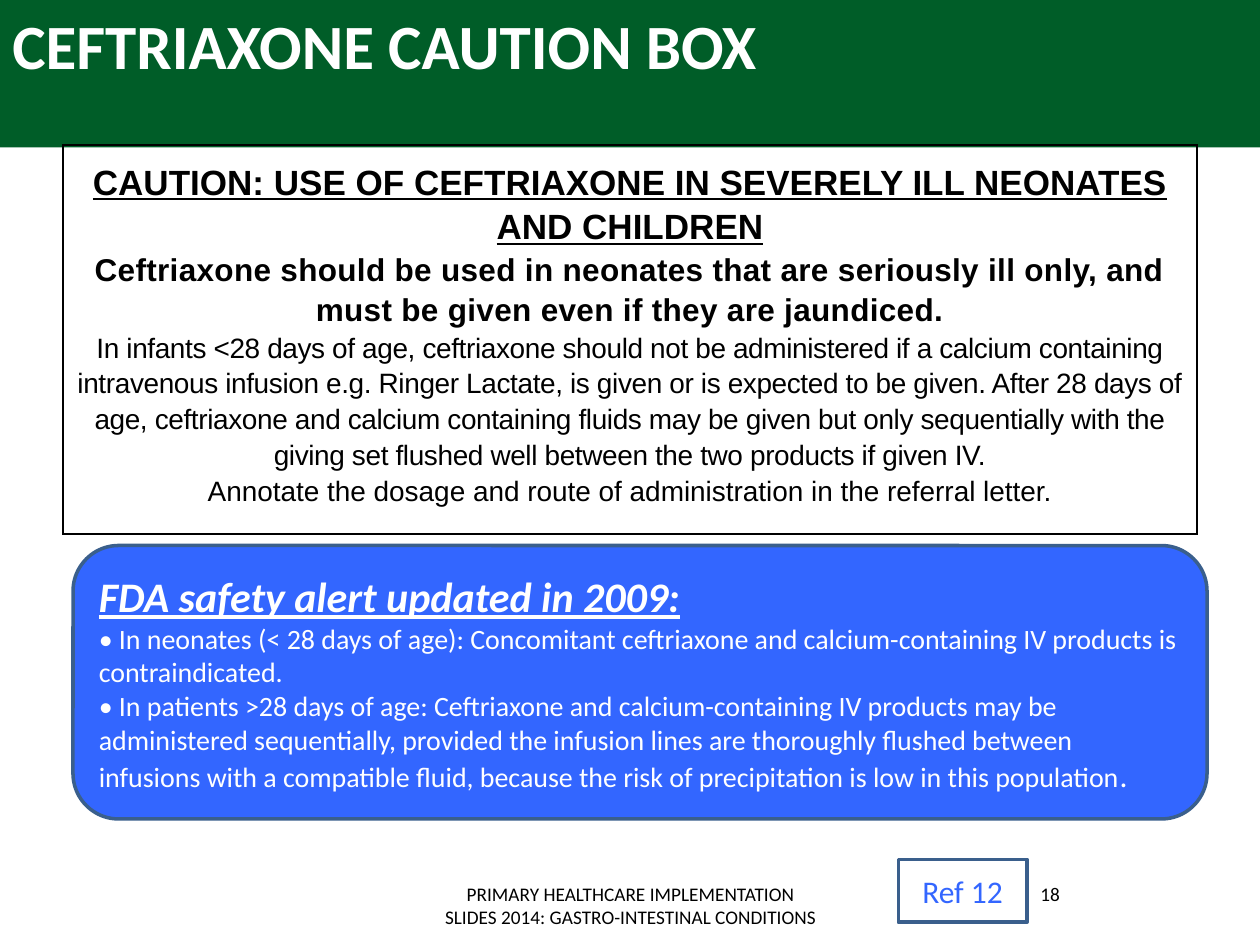
from dataclasses import dataclass

from lxml import etree
from pptx import Presentation
from pptx import util as u
from pptx.dml.color import RGBColor
from pptx.enum import shapes, text
from pptx.oxml.ns import qn

PX = 9144  # EMU in one px, 100 px to the inch
HUES = {
    "green": "005D28",
    "blue": "3366FF",
    "edge": "3A5F8C",
    "white": "FFFFFF",
    "black": "000000",
}
KINDS = shapes.MSO_SHAPE
MID = text.PP_ALIGN.CENTER
LEFT = text.PP_ALIGN.LEFT


@dataclass
class Run:
    words: str
    size: int
    hue: str = "black"
    font: str = "Calibri"
    bold: bool = False
    slant: bool = False
    under: bool = False
    gap: int = 0  # letter spacing, hundredths of a point


@dataclass
class Box:
    area: tuple[int, int, int, int]
    paras: list[list[Run]]
    align: text.PP_ALIGN = LEFT
    kind: KINDS | None = None  # None makes a plain text box
    fill: str | None = None
    line: str | None = None


def rgb(hue: str) -> RGBColor:
    return RGBColor.from_string(HUES[hue])


def scale(area: tuple) -> list[int]:
    return [n * PX for n in area]


def write(frame, paras: list[list[Run]], align, lead: float = 1.0) -> None:
    frame.word_wrap = True
    for i, runs in enumerate(paras):
        para = frame.add_paragraph() if i else frame.paragraphs[0]
        para.alignment = align
        para.line_spacing = lead
        for item in runs:
            run = para.add_run()
            run.text = item.words
            font = run.font
            font.name, font.size = item.font, u.Pt(item.size)
            font.bold, font.italic = item.bold, item.slant
            font.underline = item.under
            font.color.rgb = rgb(item.hue)
            if item.gap:
                font._element.set("spc", str(item.gap))


def draw(slide, box: Box) -> None:
    if box.kind is None:
        shape = slide.shapes.add_textbox(*scale(box.area))
    else:
        shape = slide.shapes.add_shape(box.kind, *scale(box.area))
        shape.shadow.inherit = False
        shape.text_frame.vertical_anchor = text.MSO_ANCHOR.MIDDLE
        if box.fill:
            shape.fill.solid()
            shape.fill.fore_color.rgb = rgb(box.fill)
        else:
            shape.fill.background()
        if box.line:
            shape.line.color.rgb = rgb(box.line)
            shape.line.width = u.Pt(2)
        else:
            shape.line.fill.background()
    write(shape.text_frame, box.paras, box.align)


def rule(cell, hue: str) -> None:
    """Put a one-point border on all four sides of a cell."""
    props = cell._tc.get_or_add_tcPr()
    for i, side in enumerate("LRTB"):
        edge = etree.Element(qn(f"a:ln{side}"), w=str(u.Pt(1)))
        fill = etree.SubElement(edge, qn("a:solidFill"))
        etree.SubElement(fill, qn("a:srgbClr"), val=HUES[hue])
        props.insert(i, edge)


def grid(slide, area: tuple, row: int, paras: list[list[Run]]) -> None:
    """Draw the caution notice as a table of one cell."""
    table = slide.shapes.add_table(1, 1, *scale(area)).table
    table.first_row = table.horz_banding = False
    table.rows[0].height = row * PX
    cell = table.cell(0, 0)
    cell.margin_left = cell.margin_right = 7 * PX
    cell.margin_top, cell.margin_bottom = 10 * PX, 0
    cell.fill.background()
    rule(cell, "black")
    write(cell.text_frame, paras, MID, 1.15)


CAUTION = [
    [Run("CAUTION: USE OF CEFTRIAXONE IN SEVERELY ILL NEONATES AND CHILDREN",
         20, font="Arial", bold=True, under=True)],
    [Run("Ceftriaxone should be used in neonates that are seriously ill only, "
         "and must be given even if they are jaundiced.",
         18, font="Arial", bold=True, gap=20)],
    [Run("In infants <28 days of age, ceftriaxone should not be administered "
         "if a calcium containing intravenous infusion e.g. Ringer Lactate, is "
         "given or is expected to be given. After 28 days of age, ceftriaxone "
         "and calcium containing fluids may be given but only sequentially "
         "with the giving set flushed well between the two products if given "
         "IV.", 16, font="Arial", gap=-20)],
    [Run("Annotate the dosage and route of administration in the referral "
         "letter.", 16, font="Arial")],
]
ALERT = [
    [Run("FDA safety alert updated in 2009:", 24, "white",
         bold=True, slant=True, under=True)],
    [Run("• In neonates (< 28 days of age): Concomitant ceftriaxone and "
         "calcium-containing IV products is contraindicated.", 16, "white")],
    [Run("• In patients >28 days of age: Ceftriaxone and calcium-containing "
         "IV products may be administered sequentially, provided the infusion "
         "lines are thoroughly flushed between infusions with a compatible "
         "fluid, because the risk of precipitation is low in this population",
         16, "white"),
     Run(".", 18, "white")],
]
HEAD = [
    Box((0, 0, 1000, 117), [], kind=KINDS.RECTANGLE, fill="green"),
    Box((0, 0, 900, 106),
        [[Run("CEFTRIAXONE CAUTION BOX", 36, "white", bold=True)]]),
]
FOOT = [
    Box((717, 695, 233, 40), [[Run("18", 11)]], MID),
    Box((342, 695, 317, 40),
        [[Run("PRIMARY HEALTHCARE IMPLEMENTATION SLIDES 2014: "
              "GASTRO-INTESTINAL CONDITIONS", 11)]], MID),
    Box((713, 682, 102, 50), [[Run("Ref 12", 18, "blue")]], MID,
        KINDS.RECTANGLE, line="edge"),
    Box((58, 433, 900, 217), ALERT, LEFT,
        KINDS.ROUNDED_RECTANGLE, "blue", "edge"),
]


def main() -> None:
    deck = Presentation()
    deck.slide_width, deck.slide_height = scale((1000, 750))
    slide = deck.slides.add_slide(deck.slide_layouts[6])
    for box in HEAD:
        draw(slide, box)
    grid(slide, (50, 115, 900, 309), 270, CAUTION)
    for box in FOOT:
        draw(slide, box)
    deck.save("out.pptx")


if __name__ == "__main__":
    main()
